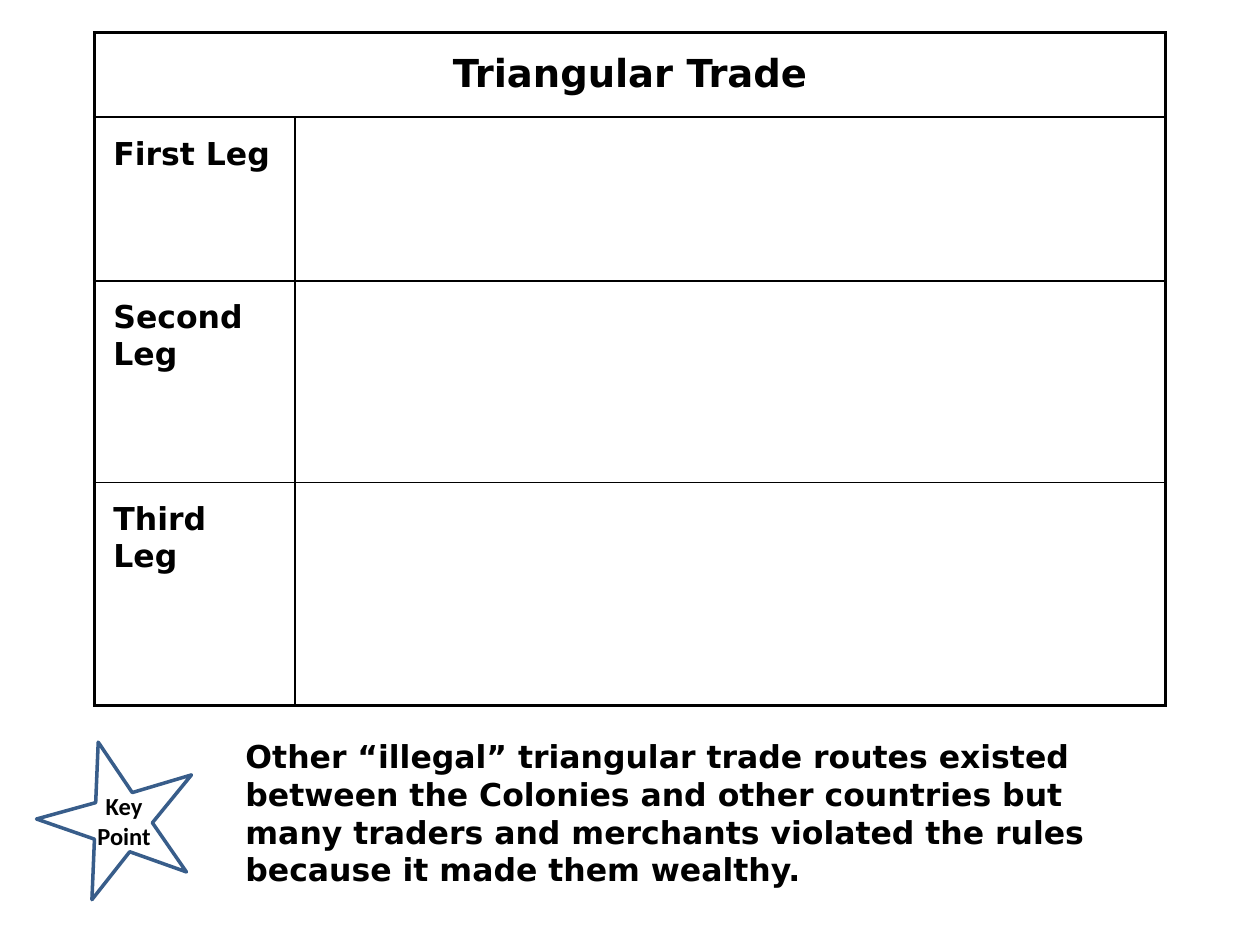
from lxml import etree
from pptx import Presentation
from pptx.dml.color import RGBColor
from pptx.enum import text
from pptx.oxml import ns
from pptx.util import Inches, Pt

TITLE = "Triangular Trade"
LEGS = ["First Leg", "Second Leg", "Third Leg"]
NOTE = ("Other “illegal” triangular trade routes existed between the Colonies "
        "and other countries but many traders and merchants violated the rules "
        "because it made them wealthy.")
COLS = [1.59, 6.91]
ROWS = [0.67, 1.3, 1.6, 1.77]
STAR = [(0.29, 6.5), (0.76, 6.37), (0.78, 5.89), (1.05, 6.29), (1.52, 6.15),
        (1.21, 6.53), (1.48, 6.92), (1.03, 6.76), (0.73, 7.14), (0.75, 6.66)]
HEX = {"ink": "000000", "paper": "FFFFFF", "star": "385D8A"}
SANS = "DejaVu Sans"
THICK, THIN = 2.25, 1


def color(name):
    return RGBColor.from_string(HEX[name])


def write(frame, words, size, face=SANS, center=False):
    frame.word_wrap = True
    par = frame.paragraphs[0]
    par.text = words
    par.alignment = text.PP_ALIGN.CENTER if center else text.PP_ALIGN.LEFT
    font = par.font
    font.name, font.size, font.bold = face, Pt(size), True
    font.color.rgb = color("ink")


def add_text(box, words, size, **style):
    shape = slide.shapes.add_textbox(*map(Inches, box))
    write(shape.text_frame, words, size, **style)


def border(cell, widths):
    props = cell._tc.get_or_add_tcPr()
    for i, (side, wide) in enumerate(widths.items()):
        line = etree.Element(ns.qn("a:ln" + side), w=str(Pt(wide)))
        fill = etree.SubElement(line, ns.qn("a:solidFill"))
        etree.SubElement(fill, ns.qn("a:srgbClr"), val=HEX["ink"])
        props.insert(i, line)


prs = Presentation()
prs.slide_width, prs.slide_height = Inches(10), Inches(7.5)
slide = prs.slides.add_slide(prs.slide_layouts[6])

# Table of trade legs
area = map(Inches, (0.75, 0.26, sum(COLS), sum(ROWS)))
table = slide.shapes.add_table(len(ROWS), len(COLS), *area).table
for col, wide in zip(table.columns, COLS):
    col.width = Inches(wide)
for row, high in zip(table.rows, ROWS):
    row.height = Inches(high)
table.cell(0, 0).merge(table.cell(0, 1))

for r in range(len(ROWS)):
    for c in range(len(COLS)):
        cell = table.cell(r, c)
        cell.fill.solid()
        cell.fill.fore_color.rgb = color("paper")
        cell.margin_left = cell.margin_right = Inches(0.15)
        cell.margin_top = cell.margin_bottom = Inches(0.15)
        border(cell, {
            "L": THICK if c == 0 else THIN,
            "R": THICK if c == 1 or r == 0 else THIN,
            "T": THICK if r == 0 else THIN,
            "B": THICK if r == len(ROWS) - 1 else THIN,
        })

write(table.cell(0, 0).text_frame, TITLE, 22, center=True)
for r, leg in enumerate(LEGS, 1):
    write(table.cell(r, 0).text_frame, leg, 18)

# Key point star
points = [(Inches(x), Inches(y)) for x, y in STAR]
pen = slide.shapes.build_freeform(*points[0])
pen.add_line_segments(points[1:], close=True)
star = pen.convert_to_shape()
star.shadow.inherit = False
star.fill.background()
star.line.color.rgb = color("star")
star.line.width = Pt(2)

# Star label and note
add_text((0.57, 6.23, 0.83, 0.57), "Key Point", 14, face="Calibri", center=True)
add_text((1.85, 5.8, 7.4, 1.31), NOTE, 18)

prs.save("out.pptx")
